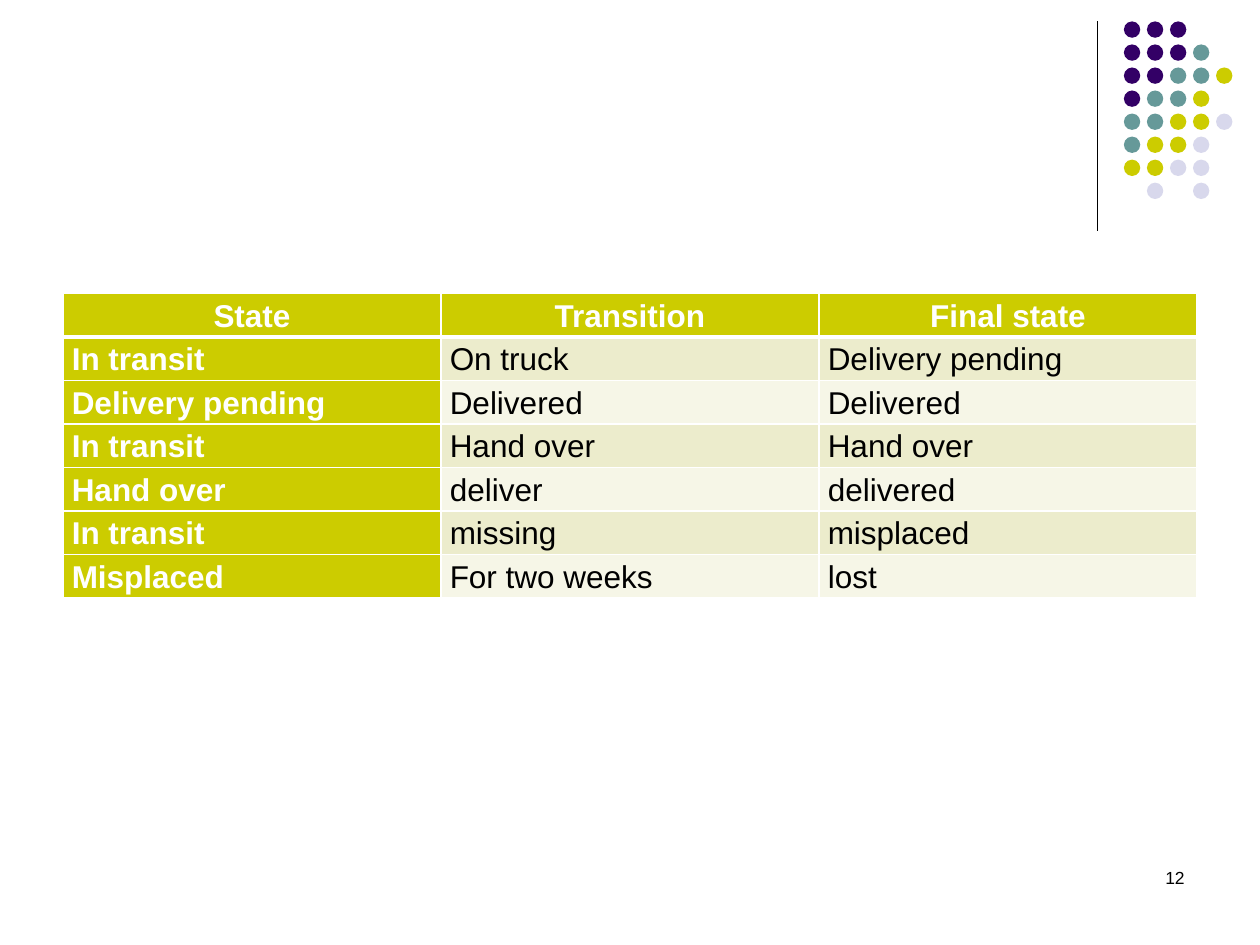
from lxml.etree import SubElement
from pptx import Presentation
from pptx.dml.color import RGBColor
from pptx.enum.shapes import MSO_CONNECTOR, MSO_SHAPE
from pptx.enum.text import MSO_ANCHOR, PP_ALIGN
from pptx.oxml import parse_xml
from pptx.oxml.ns import nsdecls, qn
from pptx.util import Inches, Pt

BLACK = RGBColor(0x00, 0x00, 0x00)
WHITE = RGBColor(0xFF, 0xFF, 0xFF)
PURPLE = RGBColor(0x33, 0x00, 0x66)
TEAL = RGBColor(0x66, 0x99, 0x99)
OLIVE = RGBColor(0xCC, 0xCC, 0x00)
LAVENDER = RGBColor(0xD8, 0xD8, 0xEC)
BAND_DARK = RGBColor(0xEC, 0xEC, 0xCC)
BAND_LIGHT = RGBColor(0xF6, 0xF6, 0xE7)

DOT_COLORS = {"P": PURPLE, "T": TEAL, "O": OLIVE, "L": LAVENDER}
DOT_ROWS = ["PPP", "PPPT", "PPTTO", "PTTO", "TTOOL", "TOOL", "OOLL", " L L"]

TRANSITIONS = [
    ("State", "Transition", "Final state"),
    ("In transit", "On truck", "Delivery pending"),
    ("Delivery pending", "Delivered", "Delivered"),
    ("In transit", "Hand over", "Hand over"),
    ("Hand over", "deliver", "delivered"),
    ("In transit", "missing", "misplaced"),
    ("Misplaced", "For two weeks", "lost"),
]


class SlideBuilder:
    font = "Arial"

    def __init__(self, slide):
        self.s = slide

    def add_run(self, tf, text, size, color=BLACK, bold=False, **paragraph_format):
        p = tf.paragraphs[0]
        for name, value in paragraph_format.items():
            setattr(p, name, value)
        r = p.add_run()
        r.text = text
        for name, value in {"name": self.font, "size": Pt(size), "bold": bold}.items():
            setattr(r.font, name, value)
        r.font.color.rgb = color

    def line(self, x1, y1, x2, y2, color=BLACK, width=0.75):
        ln = self.s.shapes.add_connector(
            MSO_CONNECTOR.STRAIGHT, Inches(x1), Inches(y1), Inches(x2), Inches(y2))
        ln.line.color.rgb = color
        ln.line.width = Pt(width)
        SubElement(ln._element.spPr, qn("a:effectLst"))

    def dot(self, x, y, size, color):
        sp = self.s.shapes.add_shape(
            MSO_SHAPE.OVAL, Inches(x), Inches(y), Inches(size), Inches(size))
        sp.shadow.inherit = False
        sp.fill.solid()
        sp.fill.fore_color.rgb = color
        sp.line.fill.background()

    def text(self, x, y, w, h, text, size, align):
        tf = self.s.shapes.add_textbox(
            Inches(x), Inches(y), Inches(w), Inches(h)).text_frame
        tf.word_wrap = True
        self.add_run(tf, text, size, alignment=align)

    def borders(self, cell, widths):
        """Draw white borders; widths are in points, keyed by side L, R, T, B."""
        tcPr = cell._tc.get_or_add_tcPr()
        for i, (side, width) in enumerate(widths.items()):
            tcPr.insert(i, parse_xml(
                f'<a:ln{side} {nsdecls("a")} w="{Pt(width)}"><a:solidFill>'
                f'<a:srgbClr val="{WHITE}"/></a:solidFill></a:ln{side}>'))

    def table(self, x, y, w, h, rows):
        """Table with a header row, a header column and banded body rows."""
        table = self.s.shapes.add_table(
            len(rows), len(rows[0]), Inches(x), Inches(y), Inches(w), Inches(h)).table
        table.horz_banding = False
        cell_format = {
            "margin_left": Inches(0.07), "margin_right": Inches(0.07),
            "margin_top": 0, "margin_bottom": 0, "vertical_anchor": MSO_ANCHOR.TOP,
        }
        for i, row in enumerate(rows):
            for j, text in enumerate(row):
                cell = table.cell(i, j)
                for name, value in cell_format.items():
                    setattr(cell, name, value)
                header = i == 0 or j == 0
                cell.fill.solid()
                cell.fill.fore_color.rgb = (
                    OLIVE if header else BAND_DARK if i % 2 else BAND_LIGHT)
                self.borders(cell, {"L": 1, "R": 1, "T": 3 if i == 1 else 1,
                                    "B": 3 if i == 0 else 1})
                self.add_run(cell.text_frame, text, 18, WHITE if header else BLACK, header,
                             alignment=PP_ALIGN.LEFT if i else PP_ALIGN.CENTER,
                             line_spacing=1.15)


def main():
    prs = Presentation()
    prs.slide_width, prs.slide_height = Inches(10), Inches(7.5)
    slide = SlideBuilder(prs.slides.add_slide(prs.slide_layouts[6]))

    slide.line(8.71, 0.17, 8.71, 1.83)
    pitch = 1.28 / 7
    for i, row in enumerate(DOT_ROWS):
        for j, key in enumerate(row):
            if key in DOT_COLORS:
                slide.dot(8.92 + j * pitch, 0.17 + i * pitch, 0.13, DOT_COLORS[key])

    slide.text(8.25, 6.83, 1.25, 0.5, "12", 10, PP_ALIGN.RIGHT)
    slide.table(0.5, 2.33, 9, 2.26, TRANSITIONS)
    prs.save("out.pptx")


if __name__ == "__main__":
    main()
